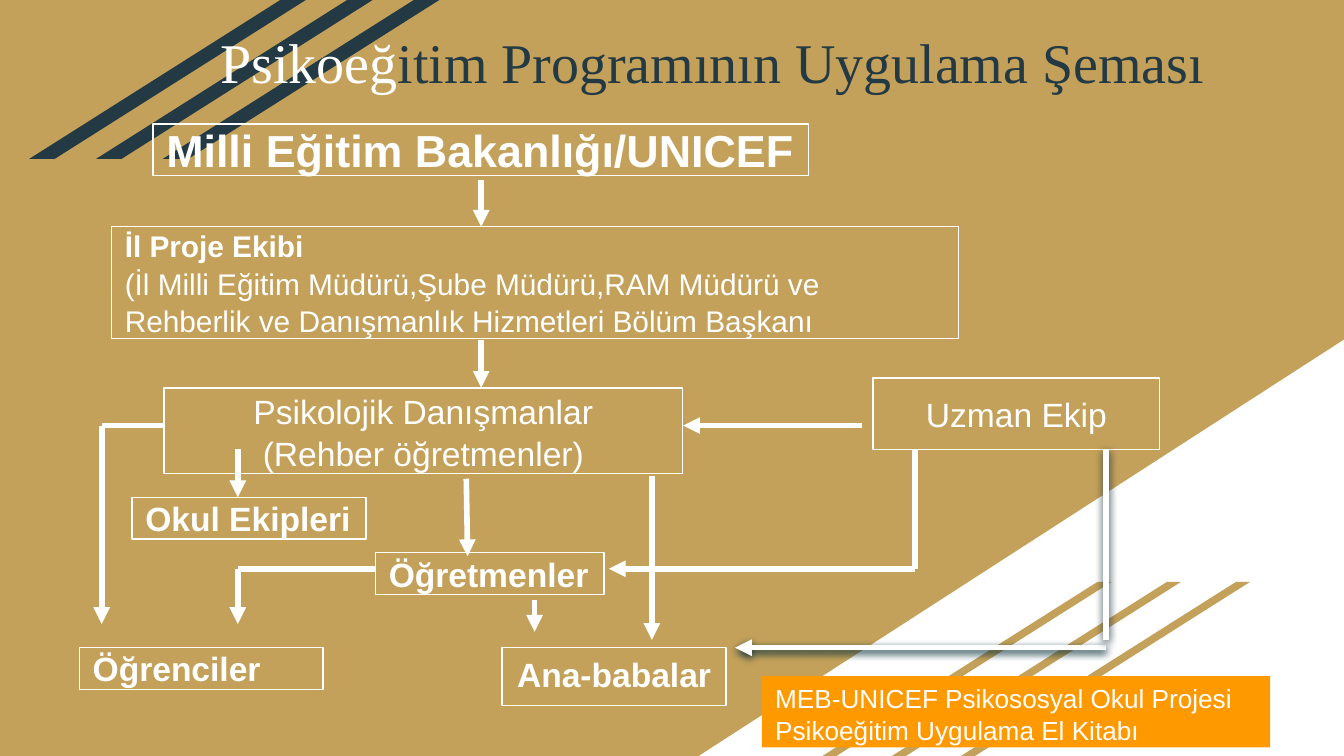
import pptx
import pptx.util
import pptx.dml.color
import pptx.enum.shapes
import pptx.enum.text
import pptx.oxml
import pptx.oxml.ns

Pt = pptx.util.Pt
SHAPE = pptx.enum.shapes.MSO_SHAPE
ALIGN = pptx.enum.text.PP_ALIGN
ANCHOR = pptx.enum.text.MSO_ANCHOR

COLORS = {"gold": "C4A15A", "navy": "233A44", "white": "FFFFFF",
          "orange": "FF9900", "teal": "0C343D"}

# Content: each paragraph is a list of (text, run format)
TITLE = [[("Psikoeğ", {}), ("itim Programının Uygulama Şeması", {"color": "navy"})]]
BOLD = {"bold": True}

# (left, top, width, height), paragraphs, text format
BOXES = [
    ((59.8, 121.5, 453.6, 59.8),
     [[("İl Proje Ekibi", BOLD)],
      [("(İl Milli Eğitim Müdürü,Şube Müdürü,RAM Müdürü ve", {})],
      [("Rehberlik ve Danışmanlık Hizmetleri Bölüm Başkanı", {})]],
     {"size": 16, "spacing": 1.05}),
    ((82, 66.4, 351, 27.6), [[("Milli Eğitim Bakanlığı/UNICEF", BOLD)]], {"size": 24}),
    ((87.8, 207.8, 278, 46),
     [[("Psikolojik Danışmanlar", {})], [("(Rehber öğretmenler)", {})]],
     {"align": ALIGN.CENTER, "spacing": 1.05}),
    ((467.8, 202.5, 153.4, 38.2), [[("Uzman Ekip", {})]], {"align": ALIGN.CENTER}),
    ((70.8, 266.4, 125.4, 22.3), [[("Okul Ekipleri", BOLD)]], {}),
    ((201.2, 296.1, 122.4, 22.3), [[("Öğretmenler", BOLD)]], {}),
    ((269, 347, 120, 31), [[("Ana-babalar", BOLD)]],
     {"align": ALIGN.CENTER, "anchor": ANCHOR.TOP}),
    ((42.6, 347, 130.4, 22.3), [[("Öğrenciler", BOLD)]], {}),
]
SOURCE = [[("MEB-UNICEF Psikososyal Okul Projesi", {})],
          [("Psikoeğitim Uygulama El Kitabı", {})]]

# Corner points of each route, with an arrowhead on the last leg
ROUTES = [
    [(257.8, 96.5), (257.8, 121.5)],
    [(257.8, 182), (257.8, 207.8)],
    [(462, 228), (366, 228)],
    [(249.8, 256.5), (250.5, 298)],
    [(127.4, 240.7), (127.4, 266.4)],
    [(201, 304.7), (127.4, 304.7), (127.4, 334.3)],
    [(286.4, 321.6), (286.4, 338.5)],
    [(349.2, 255), (349.2, 342.8)],
    [(490.3, 240.7), (490.3, 304.7), (326.2, 304.7)],
    [(87.8, 228), (54.5, 228), (54.5, 334.3)],
]

# Slanted stripes: left edges, top, width, height, colour
STRIPES = [((514.8, 477.8, 440.6), 311.8, 154.8, 93.2, "gold"),
           ((87.1, 51.4, 15.6), 0, 148.3, 85.2, "navy")]


def rgb(name):
    return pptx.dml.color.RGBColor.from_string(COLORS[name])


def add_shape(kind, box, fill=None, line=None):
    sp = s.shapes.add_shape(kind, *(Pt(v) for v in box))
    sp.shadow.inherit = False
    if fill:
        sp.fill.solid()
        sp.fill.fore_color.rgb = rgb(fill)
    else:
        sp.fill.background()
    if line:
        sp.line.color.rgb = rgb(line)
        sp.line.width = Pt(0.75)
    else:
        sp.line.fill.background()
    return sp


def write(sp, text, size=18, font="Arial", color="white", align=ALIGN.LEFT,
          anchor=ANCHOR.MIDDLE, spacing=1.0):
    tf = sp.text_frame
    tf.word_wrap = True
    tf.vertical_anchor = anchor
    for i, runs in enumerate(text):
        p = tf.add_paragraph() if i else tf.paragraphs[0]
        p.alignment = align
        p.line_spacing = spacing
        for words, fmt in runs:
            r = p.add_run()
            r.text = words
            r.font.size = Pt(size)
            r.font.name = font
            r.font.bold = fmt.get("bold", False)
            r.font.color.rgb = rgb(fmt.get("color", color))


def add_line(start, end, head=False, shadow=None):
    cx = s.shapes.add_connector(pptx.enum.shapes.MSO_CONNECTOR.STRAIGHT,
                                *(Pt(v) for v in start + end))
    cx.line.color.rgb = rgb("white")
    cx.line.width = Pt(3)
    sub, qn = pptx.oxml.ns.qn, pptx.oxml.ns.qn
    if head:
        tail = cx.line._get_or_add_ln().makeelement(qn("a:tailEnd"), {"type": "triangle"})
        cx.line._get_or_add_ln().append(tail)
    pr = cx._element.spPr
    effects = pr.makeelement(qn("a:effectLst"), {})
    pr.append(effects)
    if shadow:
        outer = pr.makeelement(qn("a:outerShdw"), {
            "blurRad": str(Pt(4.5)), "dist": str(Pt(1.5)), "dir": "5400000",
            "algn": "bl", "rotWithShape": "0"})
        outer.append(pr.makeelement(qn("a:srgbClr"), {"val": COLORS[shadow]}))
        effects.append(outer)


prs = pptx.Presentation()
prs.slide_width, prs.slide_height = Pt(720), Pt(405)
s = prs.slides.add_slide(prs.slide_layouts[6])

# Background, corner triangle and stripes
s.background.fill.solid()
s.background.fill.fore_color.rgb = rgb("gold")
corner = add_shape(SHAPE.RIGHT_TRIANGLE, (374.4, 182, 345.6, 223), fill="white")
corner._element.spPr.xfrm.set("flipH", "1")
for lefts, top, width, height, color in STRIPES:
    for left in lefts:
        stripe = add_shape(SHAPE.PARALLELOGRAM, (left, top, width, height), fill=color)
        stripe.adjustments[0] = 1.58

# Title and source note
title = s.shapes.add_textbox(Pt(110.9), Pt(5.8), Pt(547.2), Pt(54.7))
write(title, TITLE, size=30, font="Times New Roman", anchor=ANCHOR.TOP, spacing=1.15)
note = add_shape(SHAPE.RECTANGLE, (408.2, 362.2, 272.2, 38.2), fill="orange")
write(note, SOURCE, size=14, anchor=ANCHOR.TOP)

# Boxes of the scheme
for box, text, fmt in BOXES:
    write(add_shape(SHAPE.RECTANGLE, box, line="white"), text, **fmt)

# Arrows
for route in ROUTES:
    for i in range(len(route) - 1):
        add_line(route[i], route[i + 1], head=i == len(route) - 2)
add_line((592.6, 347), (393.8, 347), head=True, shadow="teal")
add_line((592.6, 240.7), (592.6, 342.8), shadow="navy")

prs.save("out.pptx")
